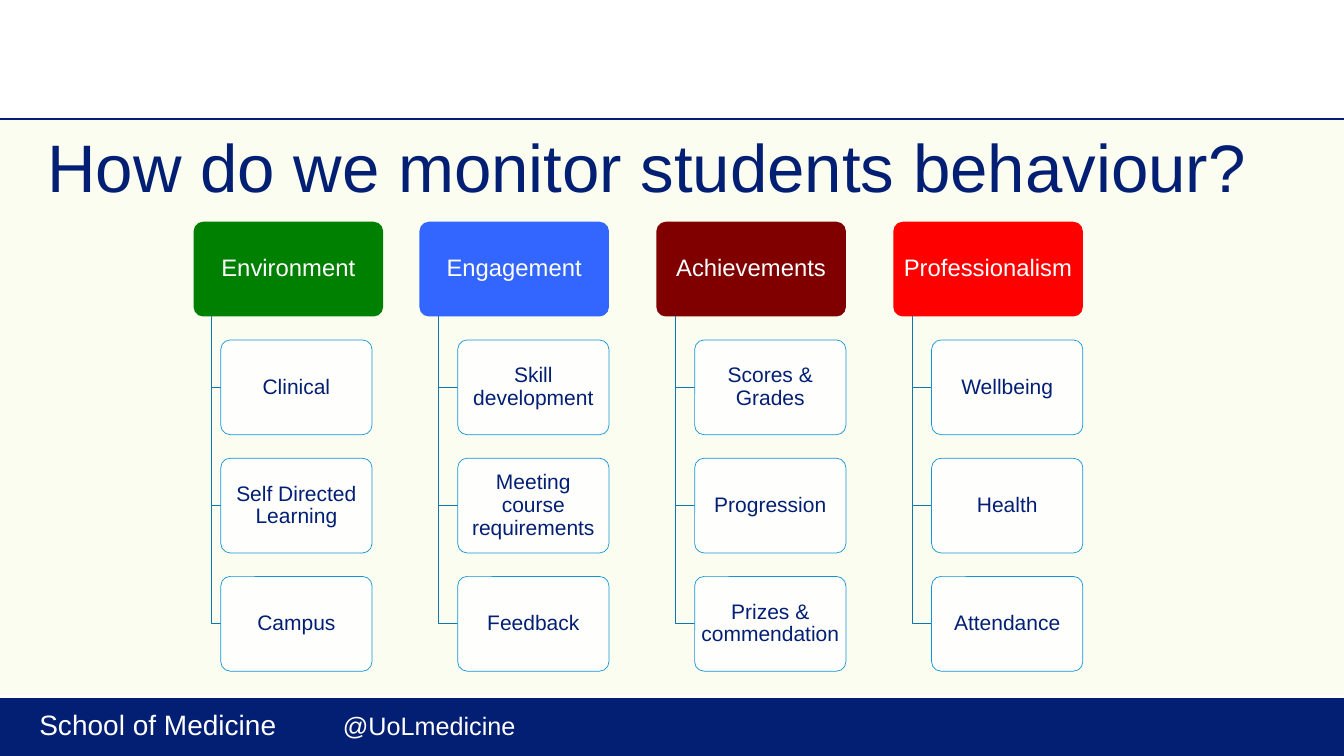
from dataclasses import dataclass

from lxml.etree import SubElement
from pptx import Presentation
from pptx.dml.color import RGBColor
from pptx.enum.shapes import MSO_CONNECTOR, MSO_SHAPE
from pptx.enum.text import MSO_ANCHOR, PP_ALIGN
from pptx.oxml.ns import qn
from pptx.shapes.autoshape import Shape
from pptx.shapes.shapetree import SlideShapes
from pptx.text.text import TextFrame, _Paragraph
from pptx.util import Inches, Pt


@dataclass(frozen=True)
class Theme:
    font: str = "Arial"
    page: str = "FCFDF1"
    navy: str = "031F73"
    white: str = "FFFFFF"
    edge: str = "1295D8"
    branch: str = "0E77AD"
    title: int = 48
    school: int = 20
    handle: int = 18
    head: int = 17
    card: int = 15


@dataclass(frozen=True)
class Column:
    name: str
    color: str
    left: float
    trunk: float
    indent: float
    cards: tuple[str, ...]


THEME = Theme()
WIDTH, HEIGHT = 13.33, 7.5
BANNER, FOOTER = 1.18, 6.91
TOP, STEP = 2.2, 1.173
HEAD_W, CARD_W, BOX_H = 1.88, 1.5, 0.94

COLUMNS = [
    Column("Environment", "008000", 1.92, 0.18, 0.27,
           ("Clinical", "Self Directed Learning", "Campus")),
    Column("Engagement", "3366FF", 4.16, 0.19, 0.38,
           ("Skill development", "Meeting course requirements", "Feedback")),
    Column("Achievements", "800000", 6.51, 0.19, 0.38,
           ("Scores & Grades", "Progression", "Prizes & commendation")),
    Column("Professionalism", "FF0000", 8.86, 0.19, 0.38,
           ("Wellbeing", "Health", "Attendance")),
]


def rgb(color: str) -> RGBColor:
    return RGBColor.from_string(color)


def style(para: _Paragraph, size: int, color: str) -> None:
    para.line_spacing = 0.9
    for run in para.runs:
        run.font.name = THEME.font
        run.font.size = Pt(size)
        run.font.color.rgb = rgb(color)


def inset(frame: TextFrame, side: float, end: float) -> None:
    frame.word_wrap = True
    frame.vertical_anchor = MSO_ANCHOR.MIDDLE
    frame.margin_left = frame.margin_right = Inches(side)
    frame.margin_top = frame.margin_bottom = Inches(end)


def add_block(shapes: SlideShapes, kind: MSO_SHAPE, left: float, top: float,
              width: float, height: float, fill: str) -> Shape:
    block = shapes.add_shape(kind, Inches(left), Inches(top),
                             Inches(width), Inches(height))
    block.shadow.inherit = False
    block.fill.solid()
    block.fill.fore_color.rgb = rgb(fill)
    block.line.fill.background()
    return block


def add_rule(shapes: SlideShapes, top: float, color: str) -> None:
    rule = shapes.add_connector(MSO_CONNECTOR.STRAIGHT, 0, Inches(top),
                                Inches(WIDTH), Inches(top))
    rule.line.color.rgb = rgb(color)
    rule.line.width = Pt(1.5)
    SubElement(rule._element.spPr, qn("a:effectLst"))


def add_box(shapes: SlideShapes, text: str, left: float, top: float,
            width: float, fill: str, size: int, color: str) -> Shape:
    box = add_block(shapes, MSO_SHAPE.ROUNDED_RECTANGLE,
                    left, top, width, BOX_H, fill)
    box.adjustments[0] = 0.1
    frame = box.text_frame
    inset(frame, 0.02, 0.02)
    frame.text = text
    para = frame.paragraphs[0]
    para.alignment = PP_ALIGN.CENTER
    style(para, size, color)
    return box


def add_card(shapes: SlideShapes, text: str, left: float, top: float) -> None:
    card = add_box(shapes, text, left, top, CARD_W, THEME.white,
                   THEME.card, THEME.navy)
    card.line.color.rgb = rgb(THEME.edge)
    card.line.width = Pt(0.5)
    tint = card._element.spPr.find(qn("a:solidFill"))[0]
    SubElement(tint, qn("a:alpha"), val="90000")


def add_branch(shapes: SlideShapes, trunk: float, top: float,
               right: float, foot: float) -> None:
    """Draw an elbow from under a head to the side of a card."""
    path = shapes.build_freeform(Inches(trunk), Inches(top))
    path.add_line_segments([(Inches(trunk), Inches(foot)),
                            (Inches(right), Inches(foot))], close=False)
    branch = path.convert_to_shape()
    branch.shadow.inherit = False
    branch.fill.background()
    branch.line.color.rgb = rgb(THEME.branch)
    branch.line.width = Pt(0.5)


def add_column(shapes: SlideShapes, column: Column) -> None:
    add_box(shapes, column.name, column.left, TOP, HEAD_W, column.color,
            THEME.head, THEME.white)
    left = column.left + column.indent
    for row, text in enumerate(column.cards, start=1):
        top = TOP + row * STEP
        add_branch(shapes, column.left + column.trunk, TOP + BOX_H,
                   left, top + BOX_H / 2)
        add_card(shapes, text, left, top)


def add_footer(shapes: SlideShapes) -> None:
    bar = add_block(shapes, MSO_SHAPE.RECTANGLE, 0, FOOTER, WIDTH,
                    HEIGHT - FOOTER, THEME.navy)
    inset(bar.text_frame, 0.39, 0.05)
    para = bar.text_frame.paragraphs[0]
    para.alignment = PP_ALIGN.LEFT
    tabs = SubElement(para._p.get_or_add_pPr(), qn("a:tabLst"))
    SubElement(tabs, qn("a:tab"), pos=str(Inches(3.01)), algn="l")
    para.add_run().text = "School of Medicine\t"
    handle = para.add_run()
    handle.text = "@UoLmedicine"
    style(para, THEME.school, THEME.white)
    handle.font.size = Pt(THEME.handle)
    add_rule(shapes, FOOTER, THEME.white)


def add_title(shapes: SlideShapes, text: str) -> None:
    box = shapes.add_textbox(Inches(0.37), Inches(1.3),
                             Inches(12.6), Inches(0.79))
    inset(box.text_frame, 0.1, 0.05)
    box.text_frame.text = text
    style(box.text_frame.paragraphs[0], THEME.title, THEME.navy)


def main() -> None:
    deck = Presentation()
    deck.slide_width, deck.slide_height = Inches(WIDTH), Inches(HEIGHT)
    slide = deck.slides.add_slide(deck.slide_layouts[6])
    slide.background.fill.solid()
    slide.background.fill.fore_color.rgb = rgb(THEME.page)
    shapes = slide.shapes
    add_footer(shapes)
    add_block(shapes, MSO_SHAPE.RECTANGLE, 0, 0, WIDTH, BANNER, THEME.white)
    add_rule(shapes, BANNER, THEME.navy)
    add_title(shapes, "How do we monitor students behaviour?")
    for column in COLUMNS:
        add_column(shapes, column)
    deck.save("out.pptx")


if __name__ == "__main__":
    main()
